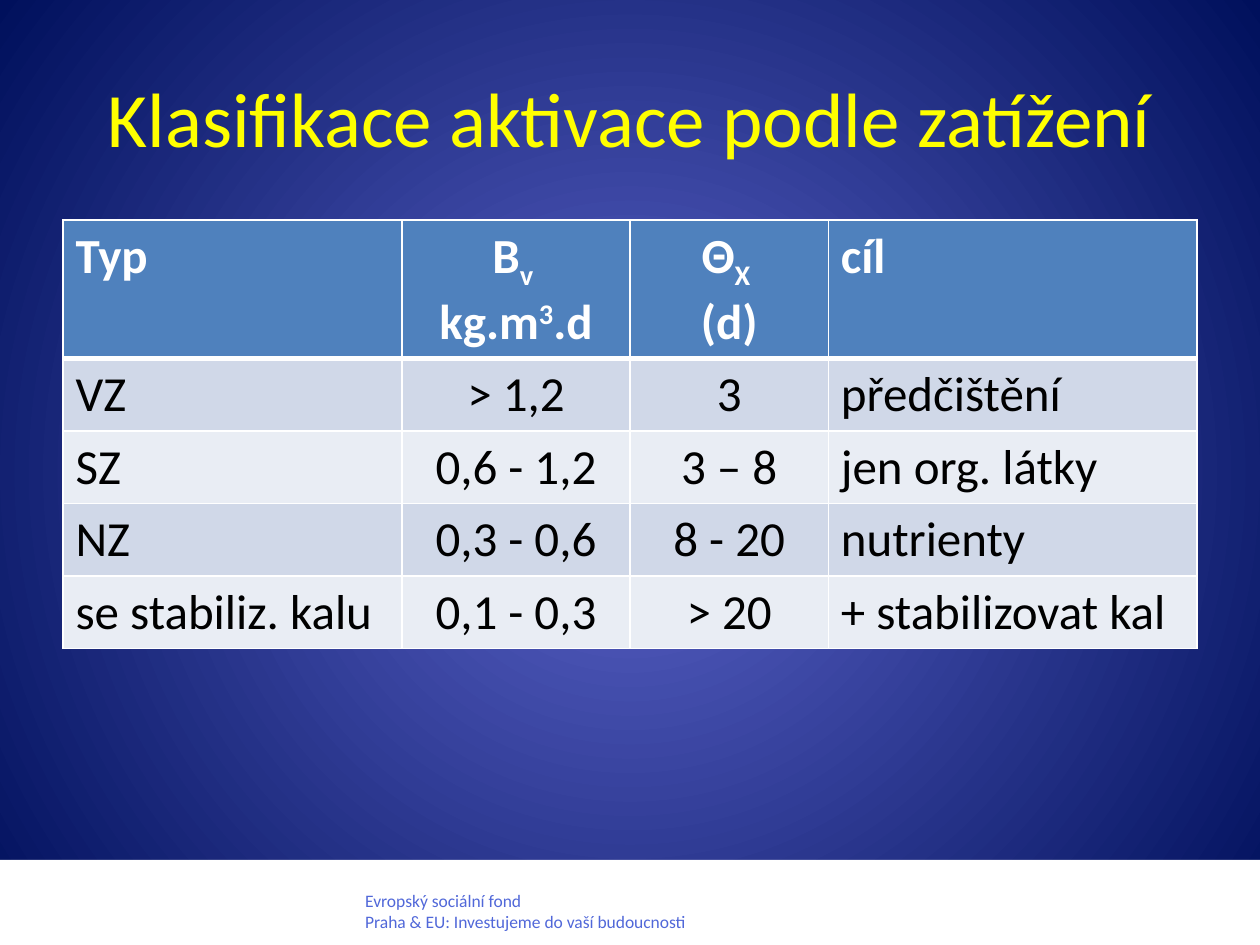
from dataclasses import dataclass

from lxml.etree import SubElement
from pptx import Presentation
from pptx.dml.color import RGBColor
from pptx.enum.shapes import MSO_SHAPE
from pptx.enum.text import MSO_ANCHOR, PP_ALIGN
from pptx.oxml.ns import qn
from pptx.util import Emu, Inches, Pt

WIDTH, HEIGHT = Inches(10), Inches(7.5)
WHITE, BLACK, YELLOW, FOOTER_BLUE = "FFFFFF", "000000", "FFFF00", "5168D9"
HEADER_FILL, BAND_FILLS = "4F81BD", ("D0D8E8", "E9EDF4")


@dataclass
class Run:
    text: str
    baseline: int = 0  # percent: negative for subscript, positive for superscript


@dataclass
class Column:
    heading: list
    values: list
    share: float  # of the table's width
    align: PP_ALIGN = PP_ALIGN.LEFT


COLUMNS = [
    Column([[Run("Typ")]], ["VZ", "SZ", "NZ", "se stabiliz. kalu"], 0.299),
    Column([[Run("B"), Run("v ", -25)], [Run("kg.m"), Run("3", 30), Run(".d")]],
           ["> 1,2", "0,6 - 1,2", "0,3 - 0,6", "0,1 - 0,3"], 0.201, PP_ALIGN.CENTER),
    Column([[Run("Θ"), Run("X ", -25)], [Run("(d)")]],
           ["3", "3 – 8", "8 - 20", "> 20"], 0.175, PP_ALIGN.CENTER),
    Column([[Run("cíl")]],
           ["předčištění", "jen org. látky", "nutrienty", "+ stabilizovat kal"], 0.325),
]


def rgb(value: str) -> RGBColor:
    return RGBColor.from_string(value)


def box(left: float, top: float, width: float, height: float) -> tuple:
    """Turn shares of the slide's size into lengths."""
    return (Emu(int(WIDTH * left)), Emu(int(HEIGHT * top)),
            Emu(int(WIDTH * width)), Emu(int(HEIGHT * height)))


def write(frame, text, *, size: float, color: str, bold: bool = False,
          align: PP_ALIGN = PP_ALIGN.LEFT) -> None:
    """Write a string, or a list of paragraphs that are lists of runs."""
    frame.word_wrap = True
    paragraphs = [[Run(line)] for line in text.split("\n")] if isinstance(text, str) else text
    for index, runs in enumerate(paragraphs):
        paragraph = frame.add_paragraph() if index else frame.paragraphs[0]
        paragraph.alignment = align
        for part in runs:
            run = paragraph.add_run()
            run.text = part.text
            run.font.name, run.font.size, run.font.bold = "Calibri", Pt(size), bold
            run.font.color.rgb = rgb(color)
            if part.baseline:
                run.font._element.set("baseline", str(part.baseline * 1000))


def paint_background(slide) -> None:
    fill = slide.background.fill
    fill.gradient()
    for stop, color, position in zip(fill.gradient_stops, ("5C64C9", "00105C"), (0, 1)):
        stop.color.rgb, stop.position = rgb(color), position
    # Radial gradient from the centre
    gradient = slide.element.find(".//" + qn("a:gradFill"))
    gradient.remove(gradient.find(qn("a:lin")))
    circle = SubElement(gradient, qn("a:path"), path="circle")
    SubElement(circle, qn("a:fillToRect"), l="50000", t="50000", r="50000", b="50000")


def style_cell(cell, fill: str, bottom: float) -> None:
    """Add the white borders, then the fill, in schema order."""
    properties = cell._tc.get_or_add_tcPr()
    for side, width in (("L", 1), ("R", 1), ("T", 1), ("B", bottom)):
        line = SubElement(properties, qn("a:ln" + side), w=str(Pt(width)))
        SubElement(SubElement(line, qn("a:solidFill")), qn("a:srgbClr"), val=WHITE)
    cell.fill.solid()
    cell.fill.fore_color.rgb = rgb(fill)


def add_load_table(slide, columns: list) -> None:
    row_count = len(columns[0].values) + 1
    left, top, width, height = box(0.05, 0.233, 0.9, 0.455)
    table = slide.shapes.add_table(row_count, len(columns), left, top, width, height).table
    table.horz_banding = False
    for index, row in enumerate(table.rows):
        row.height = Inches(0.575 if index else 1.1)
    for c, column in enumerate(columns):
        table.columns[c].width = Emu(int(width * column.share))
        for r, text in enumerate([column.heading, *column.values]):
            cell, heading = table.cell(r, c), r == 0
            style_cell(cell, HEADER_FILL if heading else BAND_FILLS[(r - 1) % 2],
                       3 if heading else 1)
            if r == 1:  # shares the thick line under the header
                cell._tc.tcPr.find(qn("a:lnT")).set("w", str(Pt(3)))
            write(cell.text_frame, text, size=28, color=WHITE if heading else BLACK,
                  bold=heading, align=column.align)


def main() -> None:
    deck = Presentation()
    deck.slide_width, deck.slide_height = WIDTH, HEIGHT
    slide = deck.slides.add_slide(deck.slide_layouts[6])
    paint_background(slide)

    # Footer band
    band = slide.shapes.add_shape(MSO_SHAPE.RECTANGLE, *box(0, 0.91, 1, 0.09))
    band.shadow.inherit = False
    band.fill.solid()
    band.fill.fore_color.rgb = rgb(WHITE)
    band.line.fill.background()
    fund = slide.shapes.add_textbox(*box(0.28, 0.935, 0.378, 0.058))
    write(fund.text_frame, "Evropský sociální fond\nPraha & EU: Investujeme do vaší budoucnosti",
          size=10, color=FOOTER_BLUE)

    # Title
    title = slide.shapes.add_textbox(*box(0.05, 0.04, 0.9, 0.167))
    title.text_frame.vertical_anchor = MSO_ANCHOR.MIDDLE
    write(title.text_frame, "Klasifikace aktivace podle zatížení",
          size=44, color=YELLOW, align=PP_ALIGN.CENTER)

    add_load_table(slide, COLUMNS)
    deck.save("out.pptx")


if __name__ == "__main__":
    main()
